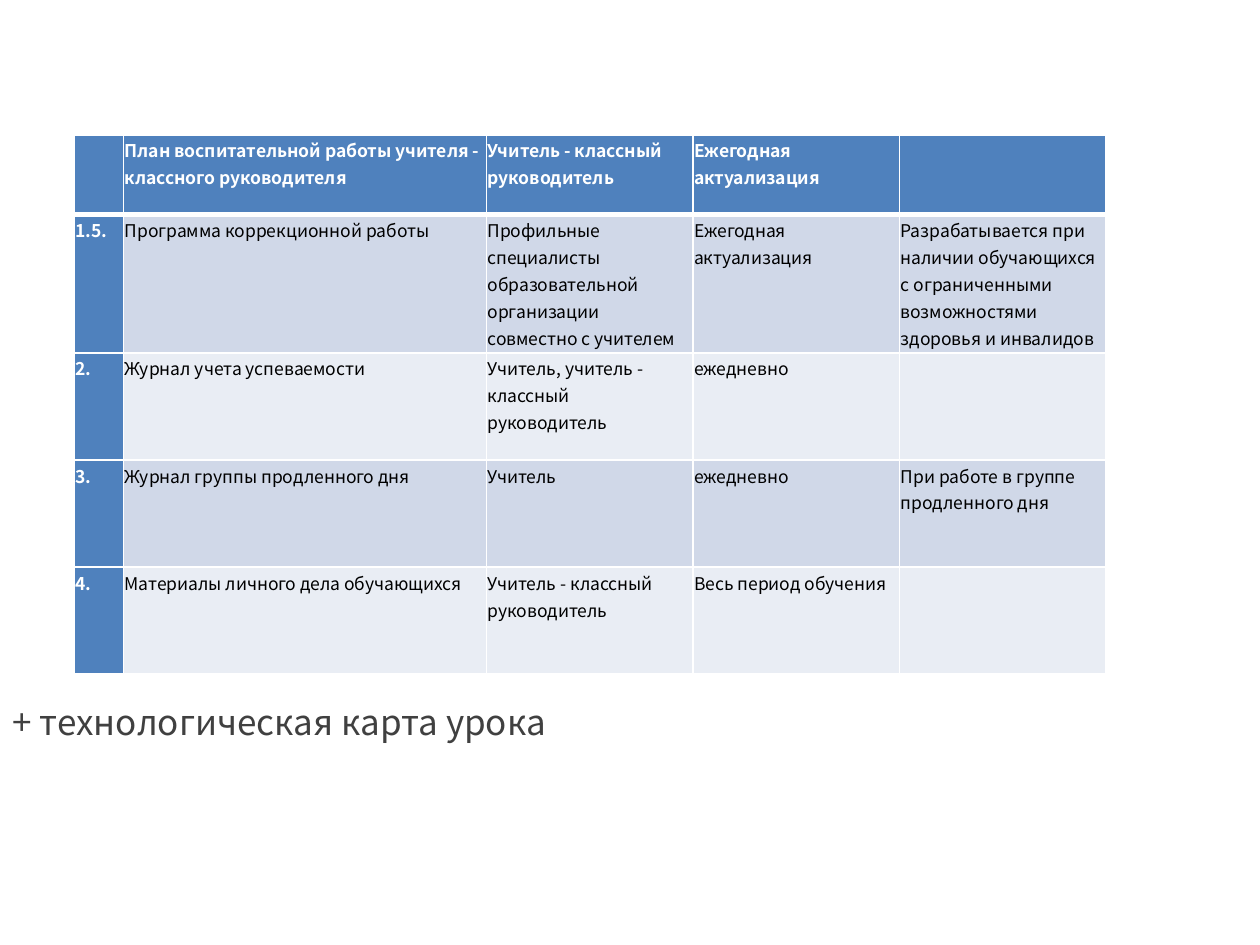
from lxml import etree
from pptx import Presentation
from pptx.dml.color import RGBColor
from pptx.enum.text import MSO_ANCHOR
from pptx.oxml.ns import qn
from pptx.util import Inches, Pt

MIDDLE = MSO_ANCHOR.MIDDLE
FONT = "Noto Sans CJK KR"
COLORS = {
    "accent": "4F81BD",
    "band_dark": "D0D8E8",
    "band_light": "E9EDF4",
    "white": "FFFFFF",
    "black": "000000",
    "note": "404040",
}

ROWS = [
    ("", "План воспитательной работы учителя - классного руководителя",
     "Учитель - классный руководитель", "Ежегодная актуализация", ""),
    ("1.5.", "Программа коррекционной работы",
     "Профильные специалисты образовательной организации совместно с учителем",
     "Ежегодная актуализация",
     "Разрабатывается при наличии обучающихся с ограниченными возможностями здоровья и инвалидов"),
    ("2.", "Журнал учета успеваемости",
     "Учитель, учитель - классный руководитель", "ежедневно", ""),
    ("3.", "Журнал группы продленного дня", "Учитель", "ежедневно",
     "При работе в группе продленного дня"),
    ("4.", "Материалы личного дела обучающихся",
     "Учитель - классный руководитель", "Весь период обучения", ""),
]
NOTE = "+ технологическая карта урока"

COLUMN_WIDTHS = [0.39, 2.88] + [1.64] * 3
ROW_HEIGHTS = [0.63, 1.1] + [0.85] * 3
TABLE_LEFT, TABLE_TOP = 0.59, 1.07
CELL_MARGIN = 0.01


def color(name):
    return RGBColor.from_string(COLORS[name])


def style_font(para, size, color_name, bold=False):
    para.font.name = FONT
    para.font.size = Pt(size)
    para.font.bold = bold
    para.font.color.rgb = color(color_name)


def add_borders(cell, widths):
    """Draw white borders; widths maps a side (L, R, T, B) to points."""
    properties = cell._tc.get_or_add_tcPr()
    for side, width in widths.items():
        line = etree.SubElement(properties, qn(f"a:ln{side}"), w=str(Pt(width)))
        fill = etree.SubElement(line, qn("a:solidFill"))
        etree.SubElement(fill, qn("a:srgbClr"), val=COLORS["white"])


def style_cell(cell, text, row, column):
    heading = row == 0 or column == 0
    band = "band_dark" if row % 2 else "band_light"
    add_borders(cell, {"L": 1, "R": 1, "T": 3 if row == 1 else 1,
                       "B": 3 if row == 0 else 1})
    cell.fill.solid()
    cell.fill.fore_color.rgb = color("accent" if heading else band)
    cell.margin_left = cell.margin_right = Inches(CELL_MARGIN)
    cell.margin_top = cell.margin_bottom = Inches(CELL_MARGIN)
    cell.text = text
    para = cell.text_frame.paragraphs[0]
    para.line_spacing = 1.07
    para.space_after = Pt(8)
    style_font(para, 10, "white" if heading else "black", heading)


def add_plan_table(page):
    table = page.shapes.add_table(
        len(ROWS), len(COLUMN_WIDTHS), Inches(TABLE_LEFT), Inches(TABLE_TOP),
        Inches(sum(COLUMN_WIDTHS)), Inches(sum(ROW_HEIGHTS))).table
    table.first_col = True
    for column, width in zip(table.columns, COLUMN_WIDTHS):
        column.width = Inches(width)
    for row, height in zip(table.rows, ROW_HEIGHTS):
        row.height = Inches(height)
    for r, texts in enumerate(ROWS):
        for c, text in enumerate(texts):
            style_cell(table.cell(r, c), text, r, c)


def add_note(page):
    box = page.shapes.add_textbox(0, Inches(5.48), Inches(9), Inches(0.5))
    frame = box.text_frame
    frame.word_wrap = True
    frame.vertical_anchor = MIDDLE
    frame.text = NOTE
    style_font(frame.paragraphs[0], 20, "note")


def main():
    deck = Presentation()
    deck.slide_width, deck.slide_height = Inches(10), Inches(7.5)
    page = deck.slides.add_slide(deck.slide_layouts[6])
    add_note(page)
    add_plan_table(page)
    deck.save("out.pptx")


if __name__ == "__main__":
    main()
